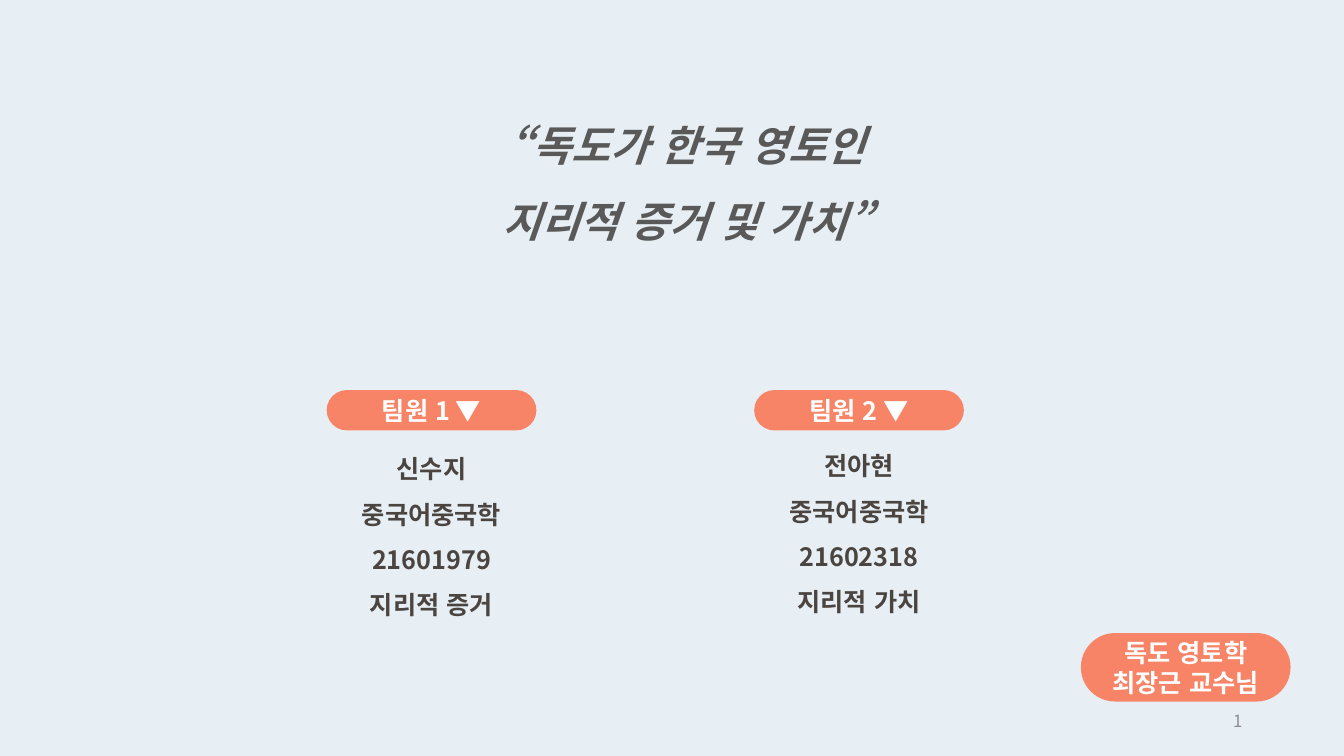
from lxml.etree import SubElement
from pptx import Presentation
from pptx.dml.color import RGBColor
from pptx.enum.shapes import MSO_SHAPE as Shape
from pptx.enum.text import MSO_ANCHOR as Anchor, MSO_AUTO_SIZE as AutoSize, PP_ALIGN as Align
from pptx.oxml.ns import qn
from pptx.util import Pt

PX = 9144
FONT = "Noto Sans CJK KR"
BACKGROUND = "E8EFF4"
CORAL = "FF572C"
WHITE = "FFFFFF"
TITLE_GRAY = "595959"
MEMBER_GRAY = "4B4541"
NUMBER_GRAY = "8C8C8C"
PILL_WIDTH = 208


def colour(value):
    return RGBColor.from_string(value)


def emu(box):
    return [length * PX for length in box]


def move(shape, box):
    shape.left, shape.top, shape.width, shape.height = emu(box)


def style_font(font, size, ink, bold=False, italic=False):
    font.name, font.size, font.bold, font.italic = FONT, Pt(size), bold, italic
    font.color.rgb = colour(ink)


def add_run(para, text, size, ink, bold=False, italic=False):
    run = para.add_run()
    run.text = text
    style_font(run.font, size, ink, bold, italic)
    properties = run._r.get_or_add_rPr()
    properties.set("lang", "ko-KR")
    SubElement(properties, qn("a:ea"), typeface=FONT)


def add_lines(frame, lines, anchor, spacing, size, ink, italic=False):
    frame.word_wrap = True
    frame.auto_size = AutoSize.NONE
    frame.vertical_anchor = anchor
    for index, runs in enumerate(lines):
        para = frame.paragraphs[0] if index == 0 else frame.add_paragraph()
        para.alignment = Align.CENTER
        para.line_spacing = spacing
        para.space_before = Pt(0)
        for text, bold in runs:
            add_run(para, text, size, ink, bold, italic)


def place_title(page, box, lines):
    title = page.shapes.title
    move(title, box)
    add_lines(title.text_frame, [[(line, True)] for line in lines],
              Anchor.TOP, 1.5, 30, TITLE_GRAY, italic=True)


def place_pill(page, box, lines):
    pill = page.shapes.add_shape(Shape.ROUNDED_RECTANGLE, *emu(box))
    pill.adjustments[0] = 0.5
    pill.shadow.inherit = False
    pill.line.fill.background()
    pill.fill.solid()
    pill.fill.fore_color.rgb = colour(CORAL)
    tint = pill._element.spPr.find(qn("a:solidFill"))[0]
    SubElement(tint, qn("a:alpha"), val="70000")
    add_lines(pill.text_frame, lines, Anchor.MIDDLE, 1.0, 18, WHITE)


def place_member(page, slot, box, details_top, label, details):
    left, top, width, height = box
    pill_left = left + (width - PILL_WIDTH) // 2
    place_pill(page, (pill_left, top, PILL_WIDTH, 40), [[(label + " ", True), ("▼", False)]])
    body = page.placeholders[slot]
    move(body, (left, top + details_top, width, height - details_top))
    add_lines(body.text_frame, [[(line, True)] for line in details],
              Anchor.TOP, 1.5, 18, MEMBER_GRAY)
    for para in body.text_frame.paragraphs:
        properties = para._p.get_or_add_pPr()
        properties.set("marL", "0")
        properties.set("indent", "0")
        SubElement(properties, qn("a:buNone"))


def place_page_number(page, box):
    frame = page.shapes.add_textbox(*emu(box)).text_frame
    frame.word_wrap = True
    frame.vertical_anchor = Anchor.MIDDLE
    para = frame.paragraphs[0]
    para.alignment = Align.RIGHT
    add_run(para, "1", 12, NUMBER_GRAY)
    number = para.runs[0]._r
    field = SubElement(para._p, qn("a:fld"), type="slidenum",
                       id="{B6F15528-21DE-4FAA-801E-634DDDAF4B2B}")
    field.extend(list(number))
    para._p.remove(number)


def build_cover(deck):
    page = deck.slides.add_slide(deck.slide_layouts.get_by_name("Two Content"))
    page.background.fill.solid()
    page.background.fill.fore_color.rgb = colour(BACKGROUND)
    place_title(page, (260, 89, 843, 152), ["“독도가 한국 영토인", "지리적 증거 및 가치”"])
    place_member(page, 1, (298, 387, 260, 229), 43, "팀원 1",
                 ["신수지", "중국어중국학", "21601979", "지리적 증거"])
    place_member(page, 2, (722, 387, 260, 226), 40, "팀원 2",
                 ["전아현", "중국어중국학", "21602318", "지리적 가치"])
    place_pill(page, (1072, 628, PILL_WIDTH, 68),
               [[("독도 영토학", True)], [("최장근 교수님", True)]])
    place_page_number(page, (942, 695, 300, 40))


def main():
    deck = Presentation()
    deck.slide_width, deck.slide_height = emu((1333, 750))
    build_cover(deck)
    deck.save("out.pptx")


if __name__ == "__main__":
    main()
